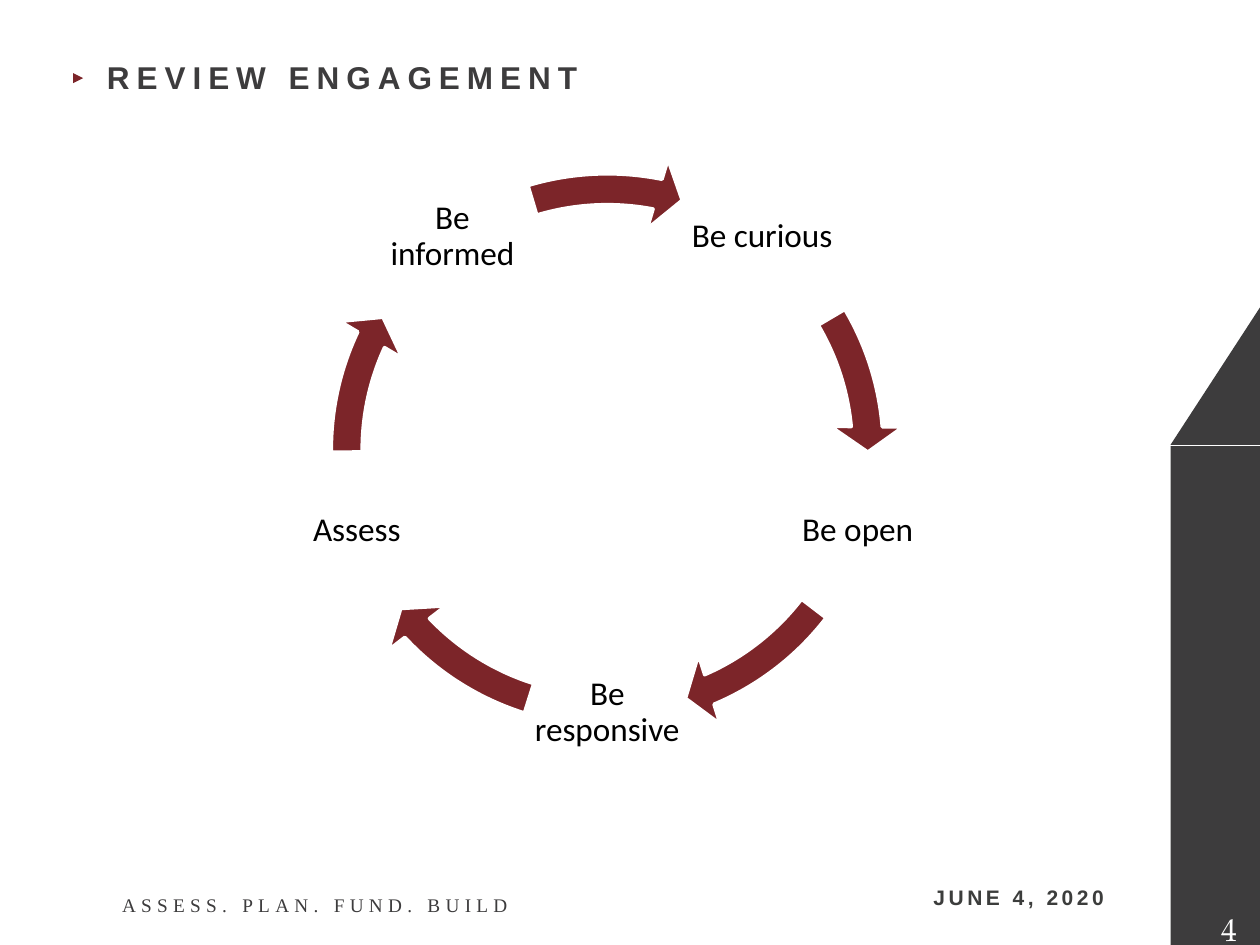
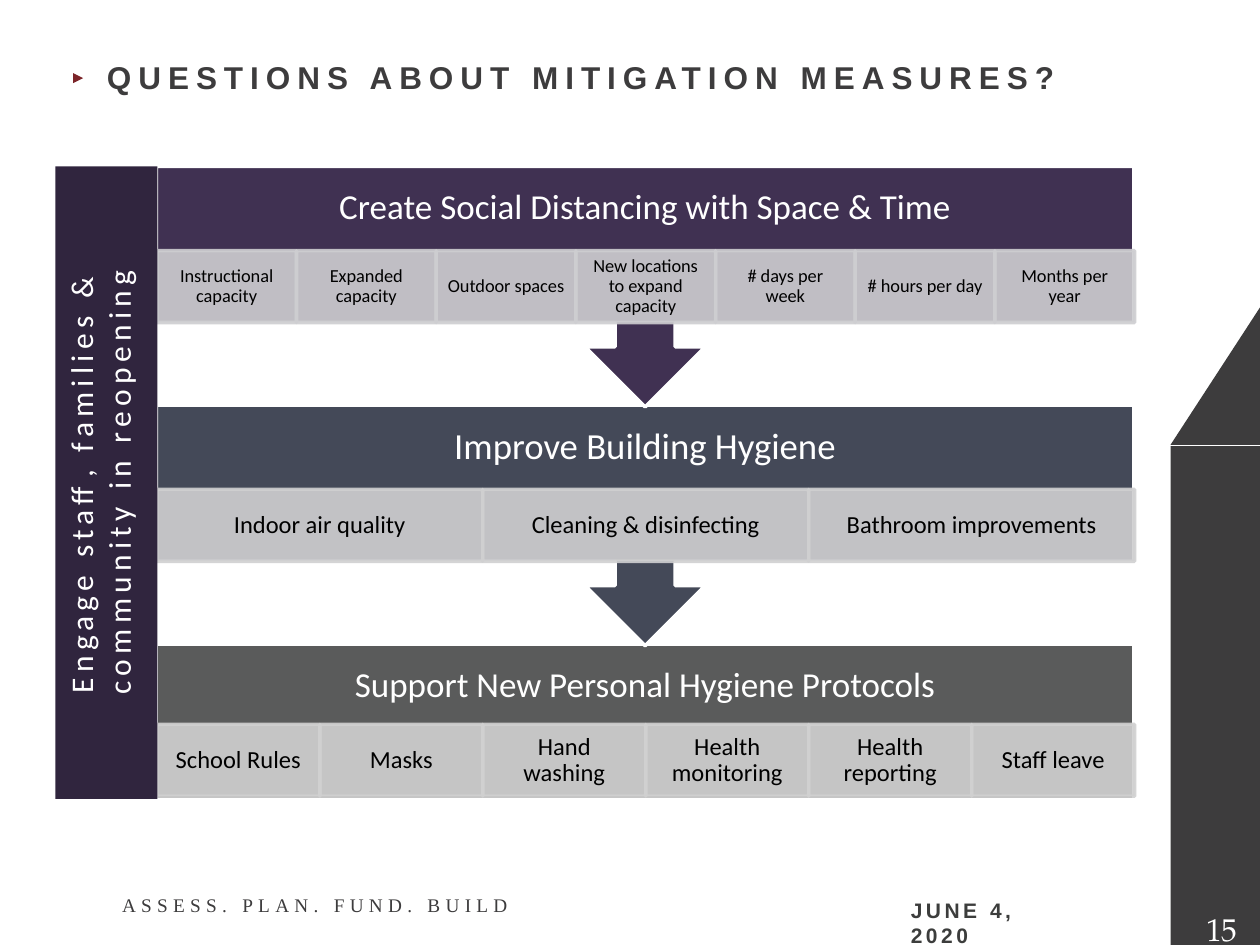
from math import cos, radians, sin

from lxml.etree import SubElement
from pptx import Presentation
from pptx.dml.color import RGBColor
from pptx.enum.shapes import MSO_SHAPE
from pptx.enum.text import MSO_ANCHOR, PP_ALIGN
from pptx.oxml.ns import qn
from pptx.util import Inches, Pt

COLUMNS, ROWS = 100, 75
COLORS = {
    "charcoal": "3D3C3D", "date": "3C3D3C", "maroon": "7C2529",
    "white": "FFFFFF", "black": "000000", "plum": "30253E",
    "purple": "403152", "slate": "444958", "gray": "5A5B5B",
    "purple tint": "CECED1", "slate tint": "D0D0D1", "gray tint": "D1D1D1",
}
FONTS = {
    "title": {"name": "Arial", "size": Pt(18), "bold": True},
    "date": {"name": "Arial", "size": Pt(12), "bold": True},
    "footer": {"name": "Times New Roman", "size": Pt(11)},
    "number": {"name": "TeX Gyre Pagella", "size": Pt(18)},
    "step": {"name": "Calibri", "size": Pt(19)},
    "sidebar": {"name": "Calibri", "size": Pt(18)},
    "band": {"name": "Calibri", "size": Pt(20)},
    "large band": {"name": "Calibri", "size": Pt(21)},
    "cell": {"name": "Calibri", "size": Pt(14)},
    "small cell": {"name": "Calibri", "size": Pt(10.5)},
}
TRACKING = {"title": 4, "date": 2, "footer": 3, "sidebar": 3}
CENTERED = {"alignment": PP_ALIGN.CENTER, "line_spacing": 0.9}
MIDDLE = MSO_ANCHOR.MIDDLE

STEPS = ["Be curious", "Be open", "Be responsive", "Assess", "Be informed"]
ARROW_ANGLES = [(329.42, 354.91), (37.54, 66.94), (107.47, 136.87),
                (179.5, 204.99), (253.29, 281.12)]
BANDS = [
    ("Create Social Distancing with Space & Time", "purple", "band", "small cell", 6.7,
     ["Instructional capacity", "Expanded capacity", "Outdoor spaces",
      "New locations to expand capacity", "# days per week", "# hours per day",
      "Months per year"]),
    ("Improve Building Hygiene", "slate", "large band", "cell", 6.7,
     ["Indoor air quality", "Cleaning & disinfecting", "Bathroom improvements"]),
    ("Support New Personal Hygiene Protocols", "gray", "band", "cell", 6.4,
     ["School Rules", "Masks", "Hand washing", "Health monitoring",
      "Health reporting", "Staff leave"]),
]


class Deck:
    """Holds the shared style and the slide being drawn on a 100 by 75 grid."""

    def __init__(self):
        self.presentation = Presentation()
        self.presentation.slide_width = Inches(10)
        self.presentation.slide_height = Inches(7.5)
        self.slide = None

    def place(self, left, top, width, height):
        """Turn columns and rows into slide lengths."""
        column = self.presentation.slide_width / COLUMNS
        row = self.presentation.slide_height / ROWS
        return [round(length) for length in
                (left * column, top * row, width * column, height * row)]

    def add_label(self, shape, text, style, color, paragraph_format=None,
                  anchor=MSO_ANCHOR.TOP, insets=(1, 0.5)):
        """Fill a shape with one styled paragraph."""
        horizontal, vertical, *_ = self.place(*insets, 0, 0)
        frame_format = {
            "word_wrap": True, "vertical_anchor": anchor,
            "margin_left": horizontal, "margin_right": horizontal,
            "margin_top": vertical, "margin_bottom": vertical,
        }
        paragraph = shape.text_frame.paragraphs[0]
        run = paragraph.add_run()
        run.text = text
        run.font.color.rgb = RGBColor.from_string(COLORS[color])
        for target, values in ((shape.text_frame, frame_format),
                               (paragraph, paragraph_format or {}),
                               (run.font, FONTS[style])):
            for name, value in values.items():
                setattr(target, name, value)
        if style in TRACKING:
            run._r.get_or_add_rPr().set("spc", str(TRACKING[style] * 100))

    def text(self, area, *content, **options):
        """Add a text box."""
        box = self.slide.shapes.add_textbox(*self.place(*area))
        self.add_label(box, *content, **options)

    def shape(self, kind, area, color, outline=None, rotation=0, alpha=None):
        """Add a filled preset shape."""
        shape = self.slide.shapes.add_shape(kind, *self.place(*area))
        shape.shadow.inherit = False
        shape.rotation = rotation
        shape.fill.solid()
        shape.fill.fore_color.rgb = RGBColor.from_string(COLORS[color])
        if outline:
            shape.line.color.rgb = RGBColor.from_string(COLORS[outline])
            shape.line.width = Pt(2)
        else:
            shape.line.fill.background()
        if alpha:
            for tone in shape._element.spPr.iter(qn("a:srgbClr")):
                SubElement(tone, qn("a:alpha"), val=str(alpha * 1000))
        return shape

    def start_slide(self, title, number, date_area):
        """Add a slide with its title, side ribbon and footer."""
        layout = self.presentation.slide_layouts[6]
        self.slide = self.presentation.slides.add_slide(layout)
        self.shape(MSO_SHAPE.RECTANGLE, (92.9, 35.4, 7.1, 39.6), "charcoal")
        self.shape(MSO_SHAPE.RIGHT_TRIANGLE, (91, 26.3, 10.9, 7.1), "charcoal",
                   rotation=270)
        self.shape(MSO_SHAPE.ISOSCELES_TRIANGLE, (5.8, 5.8, 0.8, 0.8), "maroon",
                   rotation=90)
        self.text((7.5, 4.1, 89.2, 5.8), title, "title", "charcoal")
        self.text((8.7, 70.4, 34.2, 2.9), "ASSESS. PLAN. FUND. BUILD",
                  "footer", "charcoal")
        self.text((94.2, 71.7, 5, 4), number, "number", "white",
                  {"alignment": PP_ALIGN.RIGHT}, anchor=MIDDLE)
        self.text(date_area, "JUNE 4, 2020", "date", "date")

    def cycle(self, center, radius, ring, label):
        """Draw the steps evenly round a ring of curved arrows."""
        x, y = center
        for index, (step, (start, end)) in enumerate(zip(STEPS, ARROW_ANGLES)):
            angle = radians(index * 360 / len(STEPS) - 54)
            area = (x + radius * cos(angle) - label / 2,
                    y + radius * sin(angle) - label / 2, label, label)
            self.text(area, step, "step", "black", CENTERED, anchor=MIDDLE,
                      insets=(0.3, 0.3))
            arrow = self.shape(MSO_SHAPE.CIRCULAR_ARROW,
                               (x - ring / 2, y - ring / 2, ring, ring),
                               "maroon", "white")
            values = (5.2 / 100, 5.59 * 0.6, end * 0.6, start * 0.6, 6.1 / 100)
            for position, value in enumerate(values):
                arrow.adjustments[position] = value

    def band(self, top, last, heading, color, style, cell_style, drop, cells):
        """Draw a heading band with a row of equal cells."""
        left, width = 12.4, 77.6
        if last:
            self.shape(MSO_SHAPE.RECTANGLE, (left, top, width, 12.4), color, "white")
        else:
            self.shape(MSO_SHAPE.UP_ARROW_CALLOUT, (left, top, width, 19.1),
                       color, "white", rotation=180)
        self.text((left, top, width, 6.7), heading, style, "white", CENTERED,
                  anchor=MIDDLE, insets=(1.6, 1.6))
        tint = f"{color} tint"
        cell_width = width / len(cells)
        for index, label in enumerate(cells):
            area = (left + 0.05 + index * cell_width, top + drop, cell_width, 5.7)
            cell = self.shape(MSO_SHAPE.RECTANGLE, area, tint, tint, alpha=90)
            self.add_label(cell, label, cell_style, "black", CENTERED, anchor=MIDDLE,
                           insets=(0.9 if cell_style == "small cell" else 1.1, 0.2))

    def sidebar(self, area, text):
        """Draw a bar with text running upwards."""
        bar = self.shape(MSO_SHAPE.RECTANGLE, area, "plum")
        self.add_label(bar, text, "sidebar", "white", {"alignment": PP_ALIGN.CENTER})
        bar.text_frame._txBody.bodyPr.set("vert", "vert270")


def main():
    """Build both slides and save them."""
    deck = Deck()
    deck.start_slide("REVIEW ENGAGEMENT", "4", (73.1, 69.7, 27.8, 6))
    deck.cycle(center=(48.2, 35.7), radius=20.9, ring=47.1, label=12.6)

    deck.start_slide("QUESTIONS ABOUT MITIGATION MEASURES?", "15",
                     (71.3, 70.7, 14.9, 2.9))
    for index, band in reversed(list(enumerate(BANDS))):
        deck.band(13.2 + index * 18.95, index == len(BANDS) - 1, *band)
    deck.sidebar((4.4, 13.2, 8.1, 50.2),
                 "Engage staff, families & community in reopening")
    deck.presentation.save("out.pptx")


if __name__ == "__main__":
    main()
